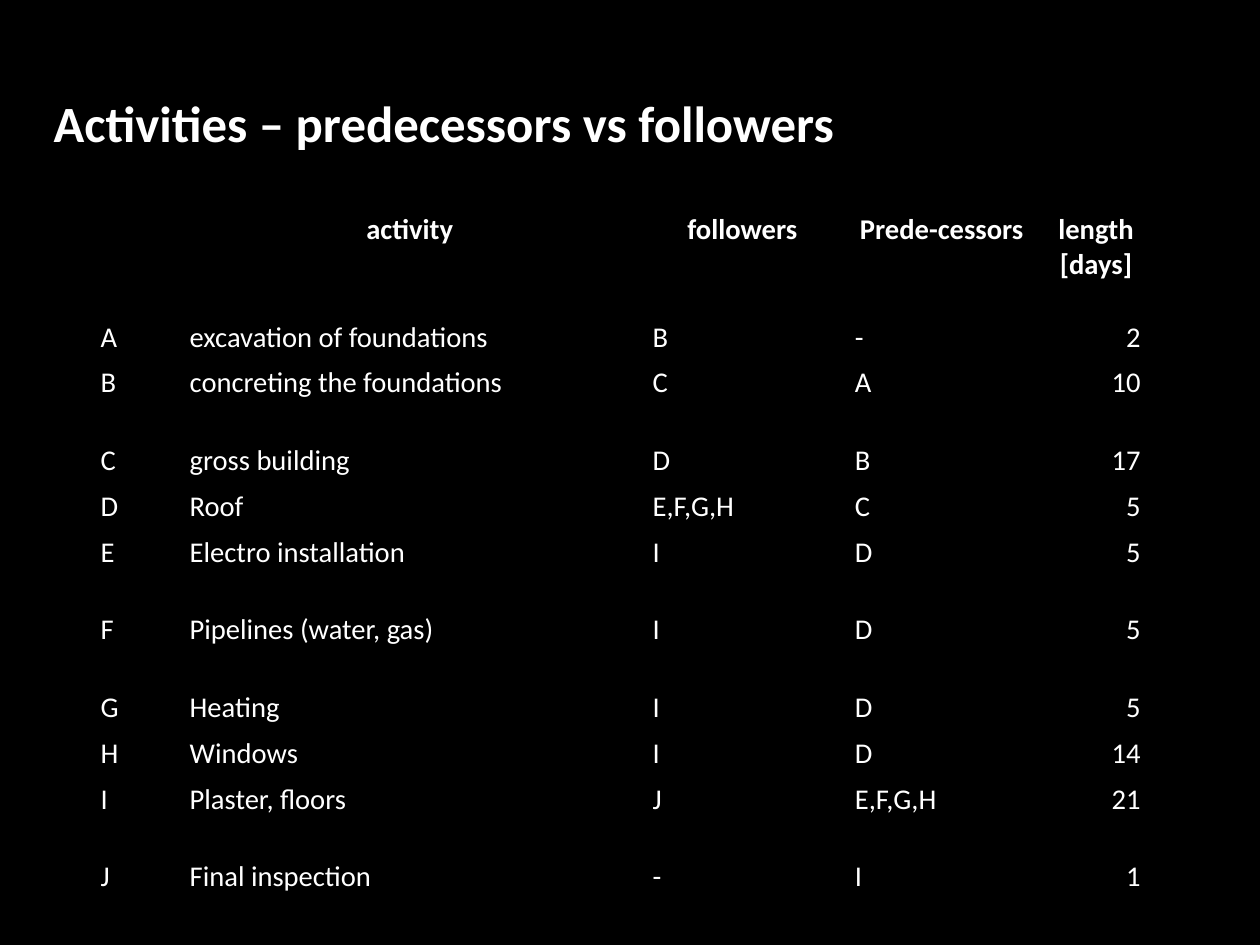
"""Build a slide listing building activities with their followers and predecessors."""
from pptx import Presentation
from pptx.dml.color import RGBColor
from pptx.enum.text import MSO_ANCHOR as ANCHOR, PP_ALIGN as ALIGN
from pptx.util import Inches, Pt

BLACK, WHITE = "000000", "FFFFFF"
CM_PER_INCH = 2.54
NO_GRID_STYLE = "{2D5ABB26-0587-4C30-8999-92F81FD0307C}"
COLUMN_WIDTHS = [0.78, 4.05, 1.77, 1.72, 0.98]
HEADER_HEIGHT, ROW_HEIGHT, TALL_HEIGHT = 0.94, 0.39, 0.68
TALL_ACTIVITIES = "CFGJ"
HEADER = ["", "activity", "followers", "Prede-cessors", "length\v[days]"]
ACTIVITIES = [
    ["A", "excavation of foundations", "B", "-", "2"],
    ["B", "concreting the foundations", "C", "A", "10"],
    ["C", "gross building", "D", "B", "17"],
    ["D", "Roof", "E,F,G,H", "C", "5"],
    ["E", "Electro installation", "I", "D", "5"],
    ["F", "Pipelines (water, gas)", "I", "D", "5"],
    ["G", "Heating", "I", "D", "5"],
    ["H", "Windows", "I", "D", "14"],
    ["I", "Plaster, floors", "J", "E,F,G,H", "21"],
    ["J", "Final inspection", "-", "I", "1"],
]


def color(value):
    """Return the colour for a hex string."""
    return RGBColor.from_string(value)


def write(tf, text, size, bold, align=ALIGN.LEFT):
    """Put one formatted paragraph into a text frame."""
    p = tf.paragraphs[0]
    p.text = text
    p.alignment = align
    for r in p.runs:
        for name, value in {"name": "Calibri", "size": Pt(size), "bold": bold}.items():
            setattr(r.font, name, value)
        r.font.color.rgb = color(WHITE)


def add_title(s, text, left, top, width, height):
    """Add the slide heading."""
    sp = s.shapes.add_textbox(Inches(left), Inches(top), Inches(width), Inches(height))
    tf = sp.text_frame
    frame = {"margin_left": 0, "margin_top": 0, "margin_right": 0, "margin_bottom": 0,
             "word_wrap": False, "vertical_anchor": ANCHOR.MIDDLE}
    for name, value in frame.items():
        setattr(tf, name, value)
    write(tf, text, 32, True)


def fill_row(row, texts, anchor, bold, aligns):
    """Fill the cells of one table row."""
    for cell, text, align in zip(row.cells, texts, aligns):
        cell.fill.background()
        cell.vertical_anchor = anchor
        write(cell.text_frame, text, 18, bold, align)


def add_activity_table(s, left, top):
    """Add the table of activities."""
    heights = [HEADER_HEIGHT] + [TALL_HEIGHT if a[0] in TALL_ACTIVITIES else ROW_HEIGHT
                                 for a in ACTIVITIES]
    sp = s.shapes.add_table(len(heights), len(COLUMN_WIDTHS), Inches(left), Inches(top),
                            Inches(sum(COLUMN_WIDTHS)), Inches(sum(heights)))
    table = sp.table
    table.first_row = table.horz_banding = False
    table._tbl.tblPr[0].text = NO_GRID_STYLE
    for column, width in zip(table.columns, COLUMN_WIDTHS):
        column.width = Inches(width)
    for row, height in zip(table.rows, heights):
        row.height = Inches(height)
    header, *body = table.rows
    fill_row(header, HEADER, ANCHOR.TOP, True, [ALIGN.CENTER] * 5)
    for row, activity in zip(body, ACTIVITIES):
        fill_row(row, activity, ANCHOR.BOTTOM, False, [ALIGN.LEFT] * 4 + [ALIGN.RIGHT])


def main():
    """Build and save the slide."""
    prs = Presentation()
    prs.slide_width, prs.slide_height = Inches(28 / CM_PER_INCH), Inches(21 / CM_PER_INCH)
    s = prs.slides.add_slide(prs.slide_layouts[6])
    s.background.fill.solid()
    s.background.fill.fore_color.rgb = color(BLACK)
    add_title(s, "Activities – predecessors vs followers", 0.47, 0.71, 7.72, 0.71)
    add_activity_table(s, 0.78, 1.81)
    prs.save("out.pptx")


if __name__ == "__main__":
    main()
